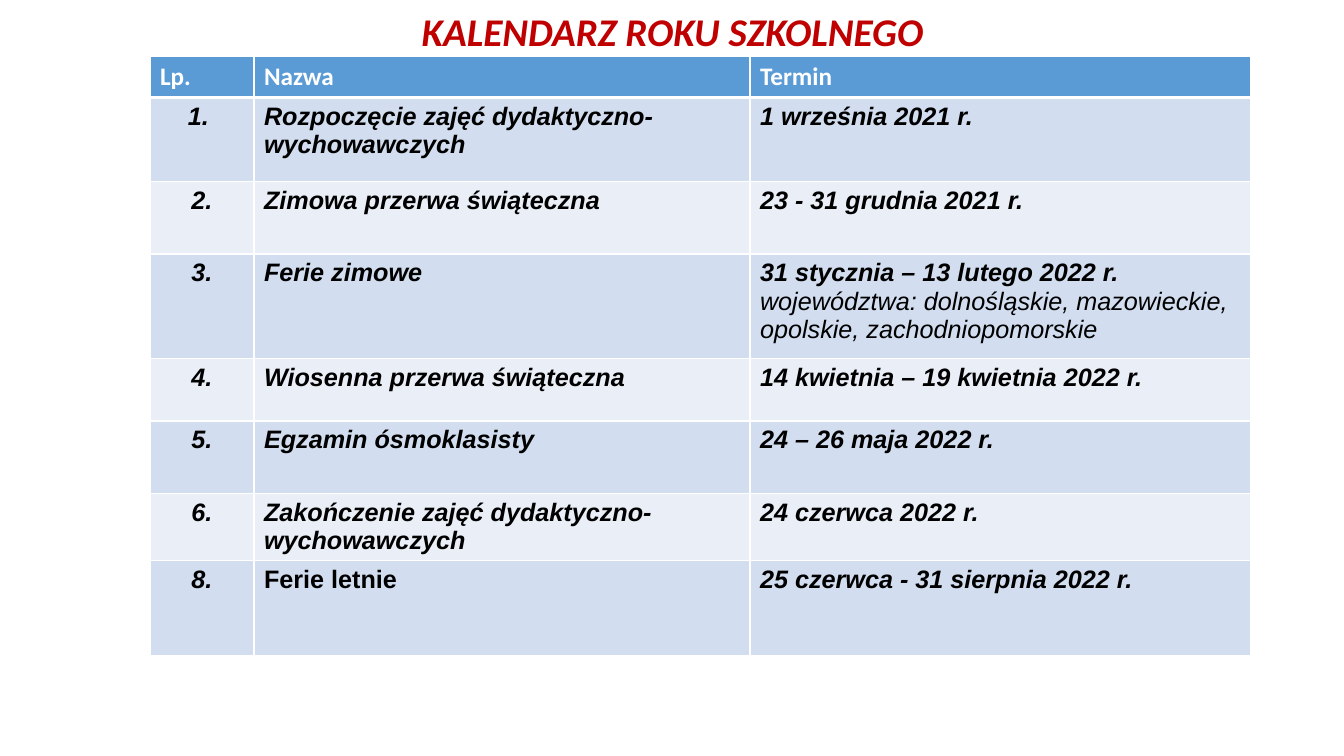
from lxml import etree
from pptx import Presentation
from pptx.dml.color import RGBColor
from pptx.enum.text import MSO_ANCHOR, MSO_AUTO_SIZE, PP_ALIGN
from pptx.oxml.ns import qn
from pptx.util import Cm, Pt

CENTER, LEFT = PP_ALIGN.CENTER, PP_ALIGN.LEFT
MIDDLE, TOP = MSO_ANCHOR.MIDDLE, MSO_ANCHOR.TOP
NO_FIT = MSO_AUTO_SIZE.NONE
RED = RGBColor(0xC0, 0x00, 0x00)
BLUE = RGBColor(0x5B, 0x9B, 0xD5)
DARK = RGBColor(0xD2, 0xDE, 0xEF)
PALE = RGBColor(0xEA, 0xEF, 0xF7)
WHITE = RGBColor(0xFF, 0xFF, 0xFF)
BLACK = RGBColor(0x00, 0x00, 0x00)

TITLE = dict(name="Calibri", size=Pt(28), bold=True, italic=True, color=RED)
HEAD = dict(name="Calibri", size=Pt(18), bold=True, italic=False, color=WHITE)
BODY = dict(name="Arial", size=Pt(18), bold=True, italic=True, color=BLACK)
LIGHT = dict(BODY, bold=False)
PLAIN = dict(BODY, italic=False)

HEADS = ["Lp.", "Nazwa", "Termin"]
DATES = [
    ("1. ", "Rozpoczęcie zajęć dydaktyczno-wychowawczych", "1 września 2021 r."),
    ("2.", "Zimowa przerwa świąteczna", "23 - 31 grudnia 2021 r."),
    ("3.", "Ferie zimowe", "31 stycznia – 13 lutego 2022 r.\n"
     "województwa: dolnośląskie, mazowieckie, opolskie, zachodniopomorskie"),
    ("4.", "Wiosenna przerwa świąteczna", "14 kwietnia – 19 kwietnia 2022 r."),
    ("5.", "Egzamin ósmoklasisty", "24 – 26 maja 2022 r."),
    ("6.", "Zakończenie zajęć dydaktyczno-wychowawczych", "24 czerwca 2022 r."),
    ("8.", "Ferie letnie", "25 czerwca - 31 sierpnia 2022 r."),
]
WIDTHS = [2.62, 12.5, 12.62]
HEIGHTS = [1.04, 2.11, 1.83, 2.64, 1.57, 1.83, 1.69, 2.38]


class Deck:
    def __init__(self):
        self.show = Presentation()
        self.show.slide_width = Cm(33.87)
        self.show.slide_height = Cm(19.05)
        self.slide = self.show.slides.add_slide(self.show.slide_layouts[5])

    def words(self, frame, text, looks, align):
        for index, line in enumerate(text.split("\n")):
            para = frame.paragraphs[0] if index == 0 else frame.add_paragraph()
            para.alignment = align
            run = para.add_run()
            run.text = line
            for key, value in looks[index].items():
                if key == "color":
                    run.font.color.rgb = value
                else:
                    setattr(run.font, key, value)

    def title(self, text, left, top, width, height):
        shape = self.slide.shapes.title
        place = dict(left=left, top=top, width=width, height=height)
        for key, value in place.items():
            setattr(shape, key, Cm(value))
        frame = shape.text_frame
        frame.auto_size = NO_FIT
        frame.vertical_anchor = MIDDLE
        self.words(frame, text, [TITLE], CENTER)
        frame.paragraphs[0].line_spacing = 0.9

    def edge(self, cell, side, width):
        props = cell._tc.get_or_add_tcPr()
        line = etree.SubElement(props, qn("a:" + side), w=str(Pt(width)))
        fill = etree.SubElement(line, qn("a:solidFill"))
        etree.SubElement(fill, qn("a:srgbClr"), val=str(WHITE))

    def cell(self, cell, text, looks, align, fill, top, base):
        for side, width in dict(lnL=1, lnR=1, lnT=top, lnB=base).items():
            self.edge(cell, side, width)
        cell.fill.solid()
        cell.fill.fore_color.rgb = fill
        cell.vertical_anchor = TOP
        self.words(cell.text_frame, text, looks, align)

    def table(self, left, top):
        rows = [HEADS, *DATES]
        grid = self.slide.shapes.add_table(
            len(rows), len(HEADS), Cm(left), Cm(top),
            Cm(sum(WIDTHS)), Cm(sum(HEIGHTS))).table
        for col, width in zip(grid.columns, WIDTHS):
            col.width = Cm(width)
        for row, height in zip(grid.rows, HEIGHTS):
            row.height = Cm(height)
        for r, row in enumerate(rows):
            fill = BLUE if r == 0 else DARK if r % 2 else PALE
            for c, text in enumerate(row):
                looks = [HEAD] if r == 0 else [BODY, LIGHT]
                if text == "Ferie letnie":
                    looks = [PLAIN]
                align = CENTER if r and c == 0 else LEFT
                self.cell(grid.cell(r, c), text, looks, align, fill,
                          3 if r == 1 else 1, 3 if r == 0 else 1)


def main():
    deck = Deck()
    deck.title("KALENDARZ ROKU SZKOLNEGO", 2.34, 0.28, 29.21, 1.14)
    deck.table(3.78, 1.42)
    deck.show.save("out.pptx")


if __name__ == "__main__":
    main()
